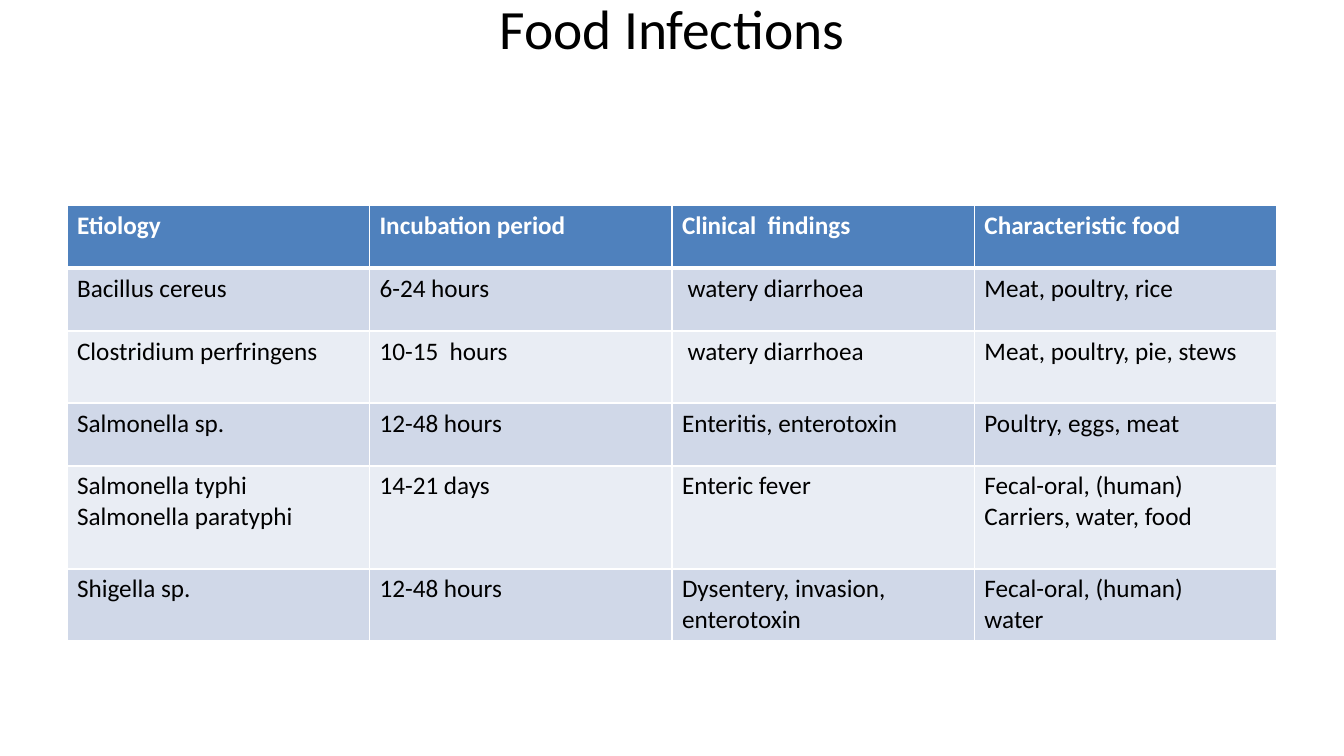
from lxml.etree import SubElement
from pptx import Presentation
from pptx.dml.color import RGBColor as RGB
from pptx.enum.text import MSO_ANCHOR as Anchor, MSO_AUTO_SIZE as Auto, PP_ALIGN as Align
from pptx.oxml.ns import qn
from pptx.util import Pt

WHITE = RGB(0xFF, 0xFF, 0xFF)
BLACK = RGB(0, 0, 0)
BLUE = RGB(0x4F, 0x81, 0xBD)
BANDS = RGB(0xE9, 0xED, 0xF4), RGB(0xD0, 0xD8, 0xE8)
SCALE = 12192000 / 1344

ROWS = [
    ("Etiology", "Incubation period", "Clinical  findings", "Characteristic food"),
    ("Bacillus cereus", "6-24 hours", " watery diarrhoea", "Meat, poultry, rice"),
    ("Clostridium perfringens", "10-15  hours", " watery diarrhoea", "Meat, poultry, pie, stews"),
    ("Salmonella sp.", "12-48 hours", "Enteritis, enterotoxin", "Poultry, eggs, meat"),
    ("Salmonella typhi\nSalmonella paratyphi", "14-21 days", "Enteric fever",
     "Fecal-oral, (human)\nCarriers, water, food"),
    ("Shigella sp.", "12-48 hours", "Dysentery, invasion,\nenterotoxin",
     "Fecal-oral, (human)\nwater"),
]
HEIGHTS = 63, 63, 72, 63, 103, 70


def px(size):
    return round(size * SCALE)


class Deck:
    """Holds the text style and the current slide, and adds elements to it."""

    def __init__(self, font):
        self.font = font
        self.show = Presentation()
        self.show.slide_width, self.show.slide_height = px(1344), px(756)
        self.slide = self.show.slides.add_slide(self.show.slide_layouts[5])

    def style(self, frame, size, color, bold=False):
        for para in frame.paragraphs:
            for run in para.runs:
                font = run.font
                font.name, font.size, font.bold = self.font, Pt(size), bold
                font.color.rgb = color

    def title(self, text, left, top, width, height):
        shape = self.slide.shapes.title
        shape.left, shape.top = px(left), px(top)
        shape.width, shape.height = px(width), px(height)
        frame = shape.text_frame
        frame.text = text
        frame.auto_size, frame.vertical_anchor = Auto.NONE, Anchor.MIDDLE
        frame.paragraphs[0].alignment = Align.CENTER
        self.style(frame, 39.6, BLACK)

    def edge(self, cell, side, width):
        props = cell._tc.get_or_add_tcPr()
        line = SubElement(props, qn("a:ln" + side), w=str(Pt(width)))
        fill = SubElement(line, qn("a:solidFill"))
        SubElement(fill, qn("a:srgbClr"), val=str(WHITE))

    def cell(self, cell, text, row):
        head = row == 0
        cell.text_frame.text = text
        self.style(cell.text_frame, 18, WHITE if head else BLACK, head)
        for side in "LRTB":
            thick = (side, row) in (("B", 0), ("T", 1))
            self.edge(cell, side, 3 if thick else 1)
        cell.fill.solid()
        cell.fill.fore_color.rgb = BLUE if head else BANDS[row % 2]

    def table(self, rows, heights, left, top, width):
        shape = self.slide.shapes.add_table(
            len(rows), len(rows[0]), px(left), px(top), px(width), px(sum(heights)))
        table = shape.table
        for row, (texts, height) in enumerate(zip(rows, heights)):
            table.rows[row].height = px(height)
            for col, text in enumerate(texts):
                self.cell(table.cell(row, col), text, row)


def main():
    deck = Deck("Calibri")
    deck.title("Food Infections", 67, 0, 1210, 54)
    deck.table(ROWS, HEIGHTS, 67, 205, 1210)
    deck.show.save("out.pptx")


if __name__ == "__main__":
    main()
